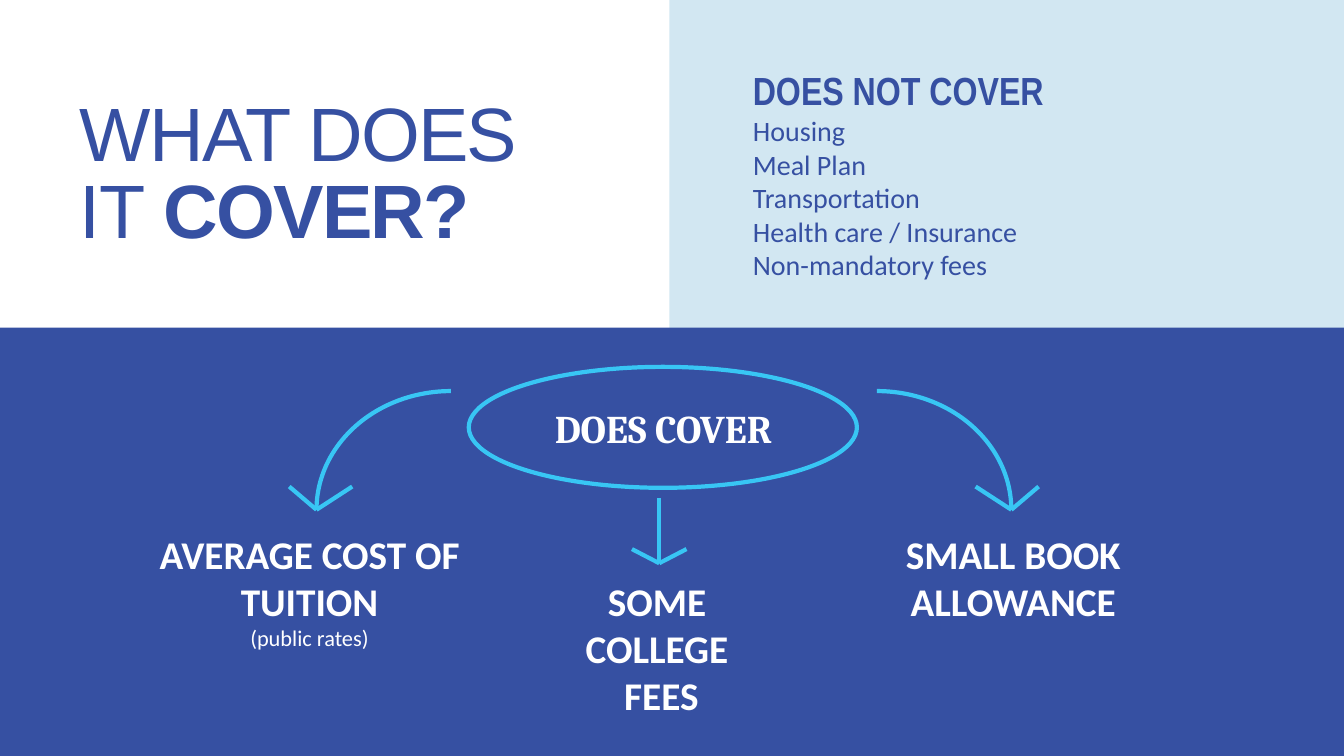
from lxml.etree import SubElement
from pptx import Presentation
from pptx.dml.color import RGBColor
from pptx.enum.shapes import MSO_CONNECTOR, MSO_SHAPE
from pptx.enum.text import MSO_ANCHOR, MSO_AUTO_SIZE, PP_ALIGN
from pptx.oxml.ns import qn
from pptx.util import Inches, Pt

COLORS = {"navy": "3650A2", "pale": "D2E7F2", "cyan": "38C6F4", "white": "FFFFFF"}


def color(name):
    return RGBColor.from_string(COLORS[name])


class CoverageSlide:
    line_width = Pt(3)

    def __init__(self, presentation):
        self.width = presentation.slide_width
        self.height = presentation.slide_height
        self.slide = presentation.slides.add_slide(presentation.slide_layouts[5])
        self.shapes = self.slide.shapes

    def point(self, x, y):
        return round(self.width * x / 100), round(self.height * y / 100)

    def box(self, x, y, width, height):
        return self.point(x, y) + self.point(width, height)

    def style(self, paragraph, font, size, color_name, bold=False):
        for run in paragraph.runs:
            run.font.name = font
            run.font.size = Pt(size)
            run.font.bold = bold
            run.font.color.rgb = color(color_name)

    def title(self, lines, area):
        title = self.shapes.title
        title.left, title.top, title.width, title.height = self.box(*area)
        frame = title.text_frame
        frame.word_wrap = True
        frame.auto_size = MSO_AUTO_SIZE.NONE
        frame.vertical_anchor = MSO_ANCHOR.BOTTOM
        frame.text = "\n".join("".join(line) for line in lines)
        for paragraph, (light, strong) in zip(frame.paragraphs, lines):
            paragraph.alignment = PP_ALIGN.LEFT
            paragraph.line_spacing = 0.85
            paragraph.runs[0].text = light
            if strong:
                paragraph.add_run().text = strong
            self.style(paragraph, "Arial", 54, "navy")
            for run in paragraph.runs:
                run.font.bold = run.text == strong
                run.font._element.set("spc", "-120")

    def text(self, lines, area, color_name, alignment):
        frame = self.shapes.add_textbox(*self.box(*area)).text_frame
        frame.word_wrap = True
        frame.text = "\n".join(line[0] for line in lines)
        for paragraph, (_, font, size, bold) in zip(frame.paragraphs, lines):
            paragraph.alignment = alignment
            self.style(paragraph, font, size, color_name, bold)

    def panel(self, area, fill):
        shape = self.shapes.add_shape(MSO_SHAPE.RECTANGLE, *self.box(*area))
        shape.shadow.inherit = False
        shape.fill.solid()
        shape.fill.fore_color.rgb = color(fill)
        shape.line.fill.background()

    def outline(self, preset, area, mirrored=False):
        shape = self.shapes.add_shape(preset, *self.box(*area))
        shape.shadow.inherit = False
        shape.fill.background()
        shape.line.color.rgb = color("cyan")
        shape.line.width = self.line_width
        if mirrored:
            shape.element.spPr.find(qn("a:xfrm")).set("flipH", "1")

    def line(self, start, end):
        connector = self.shapes.add_connector(
            MSO_CONNECTOR.STRAIGHT, *self.point(*start), *self.point(*end))
        connector.line.color.rgb = color("cyan")
        connector.line.width = self.line_width
        SubElement(connector.element.spPr, qn("a:effectLst"))

    def arrowhead(self, tip, left, right, rise):
        x, y = tip
        for reach in (-left, right):
            self.line((x + reach, y - rise), tip)


def main():
    presentation = Presentation()
    presentation.slide_width = Inches(13.33)
    presentation.slide_height = Inches(7.5)
    slide = CoverageSlide(presentation)

    slide.panel((49.8, 0, 50.2, 47.73), "pale")
    slide.panel((0, 43.33, 100, 56.67), "navy")
    slide.title([("WHAT DOES", ""), ("IT ", "COVER?")], (5.18, 8.53, 42.9, 25.73))

    exclusions = ["Housing", "Meal Plan", "Transportation",
                  "Health care / Insurance", "Non-mandatory fees"]
    slide.text([("DOES NOT COVER", "Arial Narrow", 28, True)]
               + [(item, "Calibri", 20, False) for item in exclusions],
               (55.28, 8.13, 37.28, 30.13), "navy", PP_ALIGN.LEFT)
    slide.text([("DOES COVER", "Cambria", 28, True)],
               (3.6, 52.8, 91.5, 7.6), "white", PP_ALIGN.CENTER)

    benefits = [
        (69.47, [("AVERAGE COST OF TUITION", "Calibri", 28, True),
                 ("(public rates)", "Calibri", 16, False)]),
        (75.73, [(word, "Calibri", 28, True) for word in ("SOME ", "COLLEGE ", "FEES")]),
        (69.47, [("SMALL BOOK ALLOWANCE", "Calibri", 28, True)]),
    ]
    for column, (top, lines) in enumerate(benefits):
        slide.text(lines, (10.13 + 26.18 * column, top, 25.8, 18),
                   "white", PP_ALIGN.CENTER)

    slide.outline(MSO_SHAPE.OVAL, (34.88, 48.53, 28.88, 16))
    arc_width, arc_height, arc_top = 20, 31.4, 51.73
    tip_y = arc_top + arc_height / 2
    left_x, right_x = 23.55, 75.25
    slide.outline(MSO_SHAPE.ARC, (left_x, arc_top, arc_width, arc_height), mirrored=True)
    slide.outline(MSO_SHAPE.ARC, (right_x - arc_width, arc_top, arc_width, arc_height))
    slide.arrowhead((left_x, tip_y), 2.03, 2.66, 3.07)
    slide.arrowhead((right_x, tip_y), 2.66, 2.03, 3.07)

    middle_tip = (49.05, 74.5)
    slide.line((49.05, 65.87), middle_tip)
    slide.arrowhead(middle_tip, 2.03, 2.03, 1.87)

    presentation.save("out.pptx")


if __name__ == "__main__":
    main()
